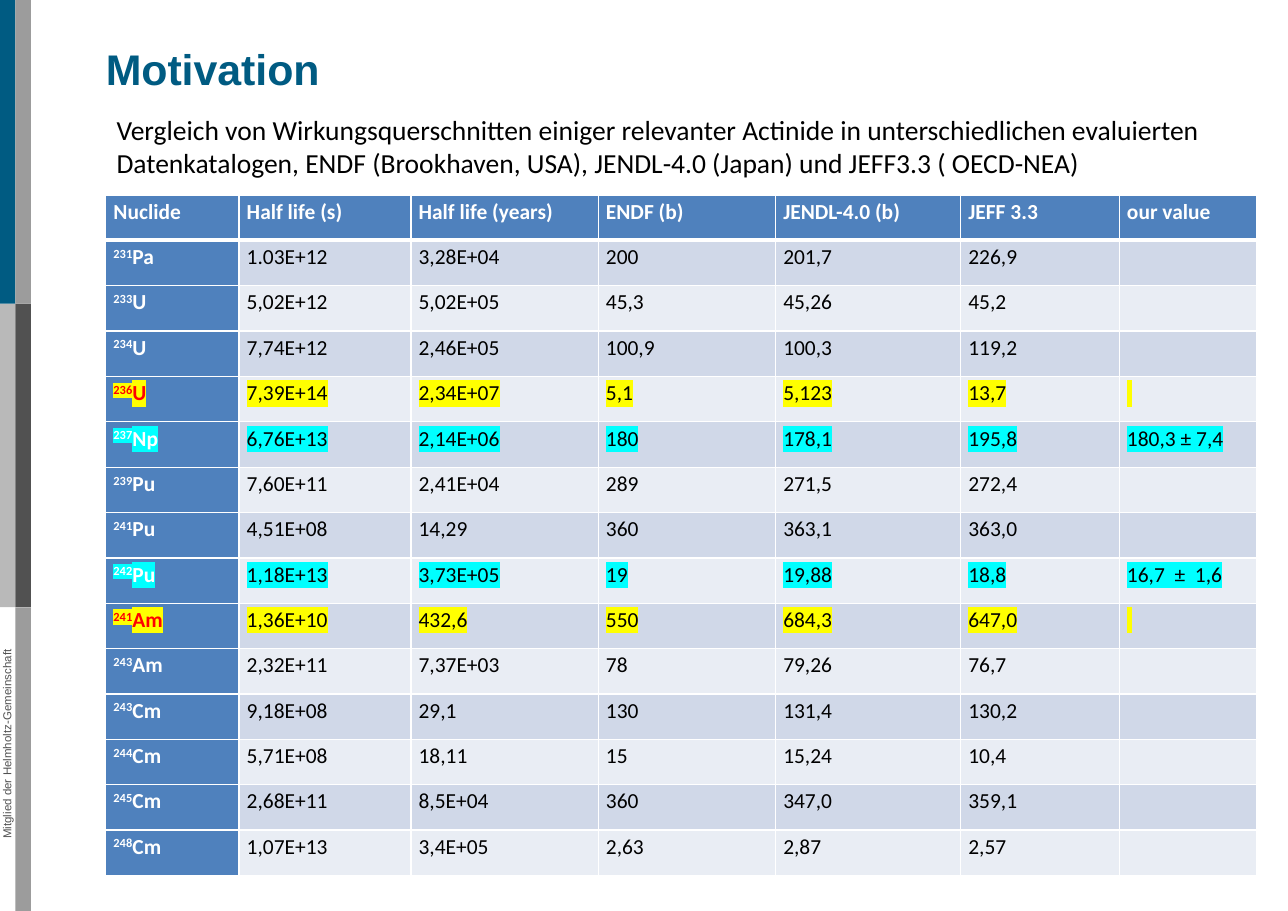
from lxml import etree
from pptx import Presentation
from pptx.dml.color import RGBColor
from pptx.enum import shapes, text
from pptx.oxml import ns
from pptx.util import Inches, Pt

WHITE = RGBColor(0xFF, 0xFF, 0xFF)
BLACK = RGBColor(0, 0, 0)
RED = RGBColor(0xFF, 0, 0)
YELLOW = RGBColor(0xFF, 0xFF, 0)
CYAN = RGBColor(0, 0xFF, 0xFF)
PETROL = RGBColor(0x00, 0x5B, 0x82)
LIGHT_GREY = RGBColor(0xB9, 0xB9, 0xB9)
MID_GREY = RGBColor(0x9C, 0x9C, 0x9C)
DARK_GREY = RGBColor(0x51, 0x51, 0x51)
HEADER_BLUE = RGBColor(0x4F, 0x81, 0xBD)
BANDS = (RGBColor(0xD0, 0xD8, 0xE8), RGBColor(0xE9, 0xED, 0xF4))

SLIDE_WIDTH, SLIDE_HEIGHT = 11.69, 8.27
STRIPE_WIDTH, STRIPE_HEIGHT = 0.14, SLIDE_HEIGHT / 3
# column, row, colour
STRIPES = [(0, 1, LIGHT_GREY), (1, 1, DARK_GREY), (0, 0, PETROL),
           (1, 0, MID_GREY), (1, 2, MID_GREY)]

INTRO = ("Vergleich von Wirkungsquerschnitten einiger relevanter Actinide in "
         "unterschiedlichen evaluierten Datenkatalogen, ENDF (Brookhaven, USA), "
         "JENDL-4.0 (Japan) und JEFF3.3 ( OECD-NEA)")
COLUMN_WIDTHS = (1.21, 1.56, 1.7, 1.61, 1.68, 1.44, 1.25)
HEADERS = ("Nuclide", "Half life (s)", "Half life (years)", "ENDF (b)",
           "JENDL-4.0 (b)", "JEFF 3.3", "our value")
NUCLIDES = [
    ("231Pa", "1.03E+12", "3,28E+04", "200", "201,7", "226,9", ""),
    ("233U", "5,02E+12", "5,02E+05", "45,3", "45,26", "45,2", ""),
    ("234U", "7,74E+12", "2,46E+05", "100,9", "100,3", "119,2", ""),
    ("236U", "7,39E+14", "2,34E+07", "5,1", "5,123", "13,7", " "),
    ("237Np", "6,76E+13", "2,14E+06", "180", "178,1", "195,8", "180,3 ± 7,4"),
    ("239Pu", "7,60E+11", "2,41E+04", "289", "271,5", "272,4", ""),
    ("241Pu", "4,51E+08", "14,29", "360", "363,1", "363,0", ""),
    ("242Pu", "1,18E+13", "3,73E+05", "19", "19,88", "18,8", "16,7  ±  1,6"),
    ("241Am", "1,36E+10", "432,6", "550", "684,3", "647,0", " "),
    ("243Am", "2,32E+11", "7,37E+03", "78", "79,26", "76,7", ""),
    ("243Cm", "9,18E+08", "29,1", "130", "131,4", "130,2", ""),
    ("244Cm", "5,71E+08", "18,11", "15", "15,24", "10,4", ""),
    ("245Cm", "2,68E+11", "8,5E+04", "360", "347,0", "359,1", ""),
    ("248Cm", "1,07E+13", "3,4E+05", "2,63", "2,87", "2,57", ""),
]
HIGHLIGHTS = {"236U": YELLOW, "241Am": YELLOW, "237Np": CYAN, "242Pu": CYAN}


def format_font(font, name, size, color, bold=False):
    font.name, font.size, font.bold = name, Pt(size), bold
    font.color.rgb = color


def add_stripe(slide, column, row, color):
    stripe = slide.shapes.add_shape(
        shapes.MSO_SHAPE.RECTANGLE,
        Inches(column * STRIPE_WIDTH), Inches(row * STRIPE_HEIGHT),
        Inches(STRIPE_WIDTH), Inches(STRIPE_HEIGHT))
    stripe.shadow.inherit = False
    stripe.fill.solid()
    stripe.fill.fore_color.rgb = color
    stripe.line.fill.background()


def remove_margins(frame):
    frame.margin_left = frame.margin_right = 0
    frame.margin_top = frame.margin_bottom = 0


def add_text(slide, content, left, top, width, height, font_name, size, color):
    box = slide.shapes.add_textbox(Inches(left), Inches(top), Inches(width), Inches(height))
    box.text_frame.word_wrap = True
    box.text_frame.text = content
    format_font(box.text_frame.paragraphs[0].runs[0].font, font_name, size, color)
    return box


def add_membership_note(slide):
    note = add_text(slide, "Mitglied der Helmholtz-Gemeinschaft",
                    -1.18, 6.69, 2.49, 0.13, "Arial", 7.5, DARK_GREY)
    note.rotation = 270
    remove_margins(note.text_frame)
    note.text_frame.paragraphs[0].alignment = text.PP_ALIGN.CENTER


def set_title(slide, content):
    title = slide.shapes.title
    title.left, title.top = Inches(0.96), Inches(0.35)
    title.width, title.height = Inches(10.38), Inches(0.54)
    frame = title.text_frame
    frame.text = content
    remove_margins(frame)
    frame.vertical_anchor = text.MSO_ANCHOR.MIDDLE
    frame.paragraphs[0].alignment = text.PP_ALIGN.LEFT
    format_font(frame.paragraphs[0].runs[0].font, "Arial", 28, PETROL, bold=True)


def add_color_element(parent, color):
    etree.SubElement(parent, ns.qn("a:srgbClr"), val=str(color))


def highlight_run(run, color):
    highlight = etree.Element(ns.qn("a:highlight"))
    add_color_element(highlight, color)
    run.font._element.find(ns.qn("a:solidFill")).addnext(highlight)


def set_borders(cell, top, bottom):
    """Give the cell white borders, 1 pt wide at its sides."""
    properties = cell._tc.get_or_add_tcPr()
    widths = {"a:lnL": 1, "a:lnR": 1, "a:lnT": top, "a:lnB": bottom}
    for index, (tag, width) in enumerate(widths.items()):
        line = etree.Element(ns.qn(tag), w=str(Pt(width)))
        add_color_element(etree.SubElement(line, ns.qn("a:solidFill")), WHITE)
        properties.insert(index, line)


def fill_cell(cell, pieces, fill, color, bold, highlight=None):
    cell.margin_left = cell.margin_right = Inches(0.07)
    cell.margin_top = cell.margin_bottom = 0
    cell.fill.solid()
    cell.fill.fore_color.rgb = fill
    paragraph = cell.text_frame.paragraphs[0]
    paragraph.line_spacing = 1.15
    for piece in filter(None, pieces):
        run = paragraph.add_run()
        run.text = piece
        format_font(run.font, "Calibri", 14, color, bold)
        if highlight:
            highlight_run(run, highlight)


def fill_nuclide_row(table, row, values):
    name = values[0]
    highlight = HIGHLIGHTS.get(name)
    name_cell = table.cell(row, 0)
    name_color = RED if highlight == YELLOW else WHITE
    fill_cell(name_cell, (name[:3], name[3:]), HEADER_BLUE, name_color, True, highlight)
    mass_number = name_cell.text_frame.paragraphs[0].runs[0]
    mass_number.font._element.set("baseline", "30000")
    for column, value in enumerate(values[1:], start=1):
        fill_cell(table.cell(row, column), (value,), BANDS[(row - 1) % 2],
                  BLACK, False, highlight)


def add_nuclide_table(slide):
    row_count = len(NUCLIDES) + 1
    table = slide.shapes.add_table(
        row_count, len(HEADERS), Inches(0.96), Inches(1.77),
        Inches(sum(COLUMN_WIDTHS)), Inches(6.18)).table
    table.horz_banding = False
    for column, width in zip(table.columns, COLUMN_WIDTHS):
        column.width = Inches(width)
    for column, header in enumerate(HEADERS):
        fill_cell(table.cell(0, column), (header,), HEADER_BLUE, WHITE, True)
    for row, values in enumerate(NUCLIDES, start=1):
        fill_nuclide_row(table, row, values)
    for row in range(row_count):
        for column in range(len(HEADERS)):
            set_borders(table.cell(row, column), top=3 if row == 1 else 1,
                        bottom=3 if row == 0 else 1)


def main():
    presentation = Presentation()
    presentation.slide_width = Inches(SLIDE_WIDTH)
    presentation.slide_height = Inches(SLIDE_HEIGHT)
    slide = presentation.slides.add_slide(presentation.slide_layouts.get_by_name("Title Only"))
    for stripe in STRIPES:
        add_stripe(slide, *stripe)
    add_membership_note(slide)
    add_nuclide_table(slide)
    set_title(slide, "Motivation")
    add_text(slide, INTRO, 0.96, 0.98, 10.24, 1.06, "Calibri", 18, BLACK)
    presentation.save("out.pptx")


if __name__ == "__main__":
    main()
